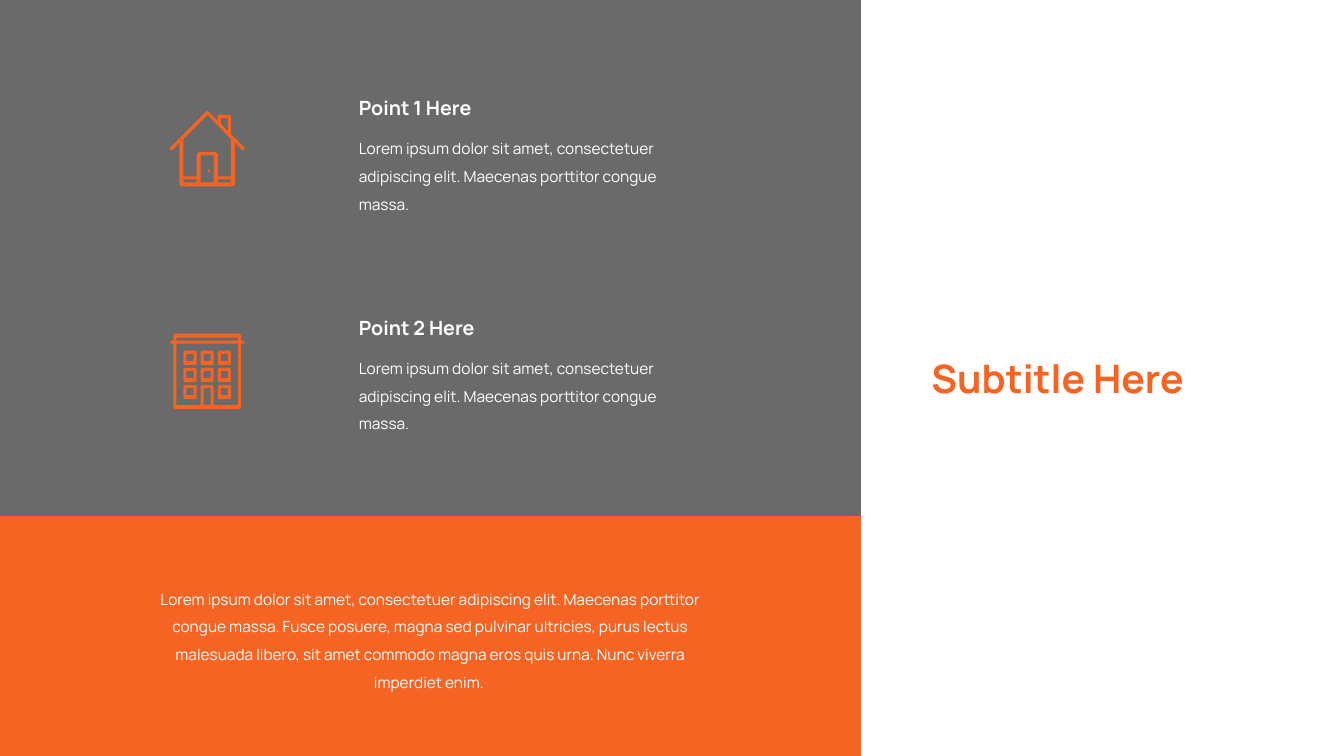
from pptx import Presentation
from pptx.dml.color import RGBColor
from pptx.enum.shapes import MSO_SHAPE as Shape
from pptx.enum.text import MSO_ANCHOR as Anchor, MSO_AUTO_SIZE as AutoSize, PP_ALIGN as Align
from pptx.util import Inches, Pt

GREY, ORANGE, WHITE = "6A6A6A", "F56423", "FFFFFF"
FONT = "Manrope"
LEFT_WIDTH, POINTS_HEIGHT = 8.54, 5.12

POINT_TEXT = ("Lorem ipsum dolor sit amet, consectetuer adipiscing elit. "
              "Maecenas porttitor congue massa.")
SUMMARY = ("Lorem ipsum dolor sit amet, consectetuer adipiscing elit. Maecenas porttitor "
           "congue massa. Fusce posuere, magna sed pulvinar ultricies, purus lectus "
           "malesuada libero, sit amet commodo magna eros quis urna. Nunc viverra "
           "imperdiet enim. ")


def color(hex_string):
    return RGBColor.from_string(hex_string)


def paint(shape, fill):
    shape.shadow.inherit = False
    shape.fill.solid()
    shape.fill.fore_color.rgb = color(fill)
    shape.line.fill.background()


def add_panel(page, left, top, width, height, fill):
    panel = page.shapes.add_shape(
        Shape.RECTANGLE, Inches(left), Inches(top), Inches(width), Inches(height))
    paint(panel, fill)


def add_text(page, left, top, width, height, text, size, ink=WHITE, bold=False,
             align=Align.LEFT, anchor=Anchor.TOP, spacing=1.5):
    box = page.shapes.add_textbox(Inches(left), Inches(top), Inches(width), Inches(height))
    frame = box.text_frame
    frame.word_wrap = True
    frame.auto_size = AutoSize.SHAPE_TO_FIT_TEXT
    frame.vertical_anchor = anchor
    frame.text = text
    para = frame.paragraphs[0]
    para.alignment = align
    para.line_spacing = spacing
    font = para.runs[0].font
    font.name, font.size, font.bold = FONT, Pt(size), bold
    font.color.rgb = color(ink)


# Icon outlines, in hundredths of an inch from the icon's top left corner
def rectangle(left, top, right, bottom):
    return [(left, top), (right, top), (right, bottom), (left, bottom)]


def rounded(left, top, right, bottom, cut=1):
    return [(left + cut, top), (right - cut, top), (right, top + cut),
            (right, bottom - cut), (right - cut, bottom), (left + cut, bottom),
            (left, bottom - cut), (left, top + cut)]


def house_outlines():
    walls_and_roof = [
        (74, 36), (61, 23), (61, 5), (59, 4), (49, 4), (48, 5), (48, 10), (39, 1),
        (38, 0), (36, 1), (1, 36), (0, 37), (2, 39), (3, 39), (10, 31), (10, 73),
        (12, 75), (63, 75), (65, 73), (65, 31), (72, 39), (73, 39), (75, 37)]
    inside = [(61, 65), (48, 65), (48, 43), (46, 41), (29, 41), (27, 43),
              (27, 65), (14, 65), (14, 28), (38, 4), (61, 28)]
    chimney = [(51, 7), (58, 7), (58, 20), (51, 13)]
    door = rectangle(31, 44, 44, 71)
    knob = [(39, 61), (41, 59), (39, 58), (38, 59)]
    steps = [rectangle(left, 68, left + 13, 71) for left in (14, 48)]
    return [walls_and_roof, inside, chimney, door, knob, *steps]


def building_outlines():
    walls_and_roof = [
        (73, 7), (71, 7), (71, 2), (70, 0), (5, 0), (4, 2), (4, 7), (2, 7), (0, 9),
        (2, 10), (4, 10), (4, 73), (5, 75), (70, 75), (71, 73), (71, 10), (73, 10), (75, 9)]
    inside = [(68, 71), (44, 71), (44, 53), (43, 51), (32, 51), (31, 53),
              (31, 71), (7, 71), (7, 10), (68, 10)]
    outlines = [walls_and_roof, inside, rectangle(7, 4, 68, 7), rectangle(34, 54, 41, 71)]
    for row in range(3):
        for column in range(3):
            if (row, column) == (2, 1):  # the door stands here
                continue
            left, top = 14 + 17 * column, 17 + 17 * row
            outlines.append(rounded(left, top, left + 13, top + 14))
            outlines.append(rectangle(left + 3, top + 3, left + 10, top + 10))
    return outlines


def add_icon(page, left, top, outlines):
    first, *others = outlines
    builder = page.shapes.build_freeform(*first[0], scale=Inches(0.01))
    builder.add_line_segments(first[1:], close=True)
    for outline in others:
        builder.move_to(*outline[0])
        builder.add_line_segments(outline[1:], close=True)
    paint(builder.convert_to_shape(Inches(left), Inches(top)), ORANGE)


# One point: icon on the left, heading and text on the right
def add_point(page, left, top, heading, outlines, icon_drop):
    text_left, text_width = left + 1.78, 3.21
    add_text(page, text_left, top + 0.45, text_width, 0.9, POINT_TEXT, 11)
    add_text(page, text_left, top, text_width, 0.41, heading, 14, bold=True)
    add_icon(page, left, top + icon_drop, outlines)


def add_points_region(page, width, height):
    add_panel(page, 0, 0, width, height, GREY)
    add_point(page, 1.68, 0.79, "Point 1 Here", house_outlines(), 0.31)
    add_point(page, 1.68, 2.97, "Point 2 Here", building_outlines(), 0.34)


def add_summary_region(page, top, width, height):
    add_panel(page, 0, top, width, height, ORANGE)
    text_width, text_height = 5.96, 1.18
    add_text(page, (width - text_width) / 2, top + (height - text_height) / 2,
             text_width, text_height, SUMMARY, 11,
             align=Align.CENTER, anchor=Anchor.MIDDLE)


def add_subtitle_region(page, left):
    add_text(page, left + 0.6, 3.46, 3.67, 0.57, "Subtitle Here", 28, ORANGE,
             bold=True, anchor=Anchor.BOTTOM, spacing=1.0)


def main():
    deck = Presentation()
    deck.slide_width, deck.slide_height = Inches(13.33), Inches(7.5)
    page = deck.slides.add_slide(deck.slide_layouts[6])
    add_points_region(page, LEFT_WIDTH, POINTS_HEIGHT)
    add_summary_region(page, POINTS_HEIGHT, LEFT_WIDTH, 7.5 - POINTS_HEIGHT)
    add_subtitle_region(page, LEFT_WIDTH)
    deck.save("out.pptx")


if __name__ == "__main__":
    main()
